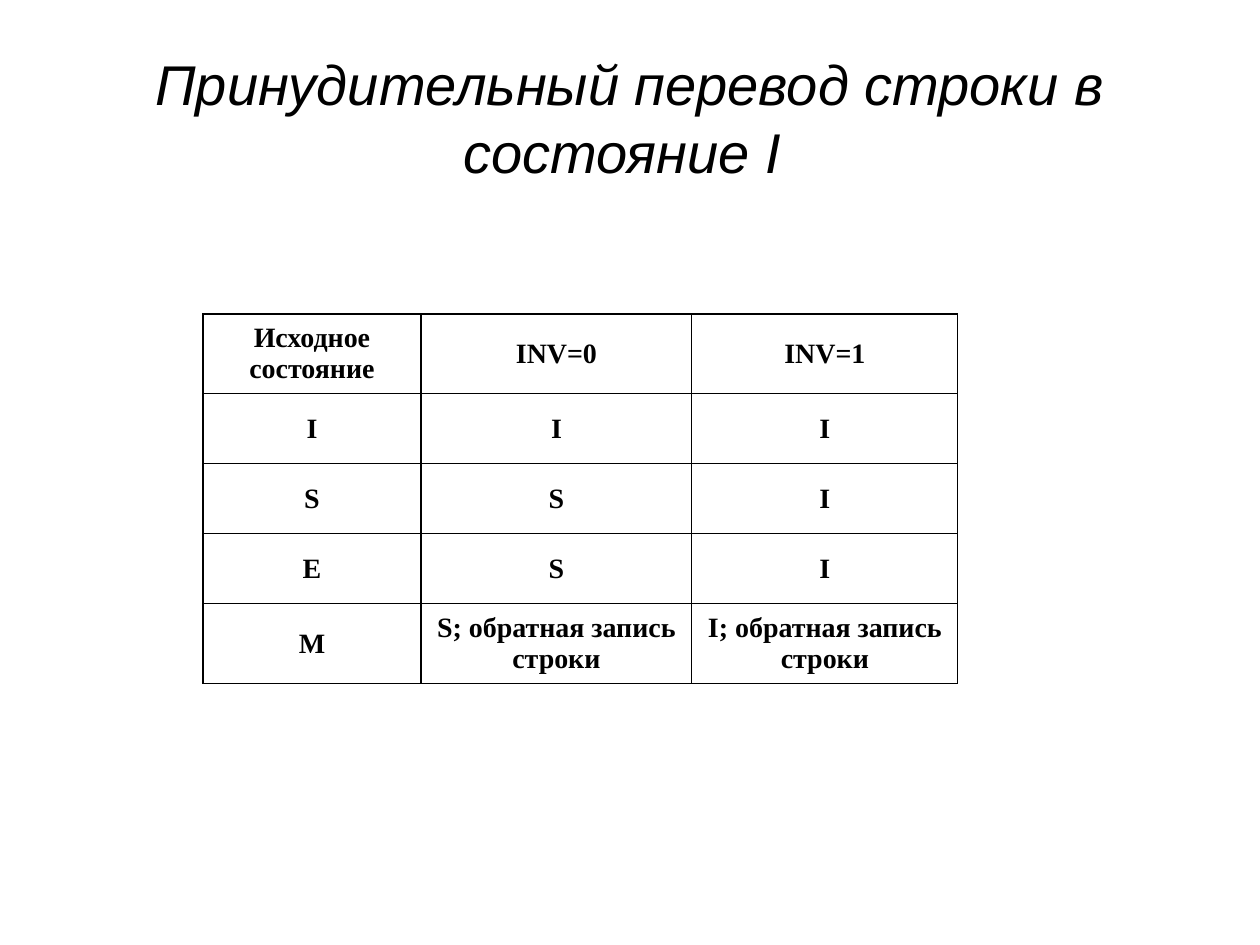
from lxml.etree import SubElement
from pptx import Presentation
from pptx.dml.color import RGBColor
from pptx.enum.text import MSO_ANCHOR, PP_ALIGN
from pptx.oxml.ns import qn
from pptx.util import Inches, Pt

PX = Inches(1) // 126
BLACK = RGBColor(0x00, 0x00, 0x00)
WHITE = RGBColor(0xFF, 0xFF, 0xFF)

TITLE = "Принудительный перевод строки в состояние I "
STATES = [
    ["Исходное состояние", "INV=0", "INV=1"],
    ["I", "I", "I"],
    ["S", "S", "I"],
    ["Е", "S", "I"],
    ["М", "S; обратная запись строки", "I; обратная запись строки"],
]
COL_WIDTHS = [218, 271, 266]
ROW_HEIGHTS = [79, 70, 70, 70, 79]


class SlideBuilder:
    title_font, title_size = "Arial", 32
    cell_font, cell_size = "Times New Roman", 16
    border_width = 0.75

    def __init__(self, prs):
        self.s = prs.slides.add_slide(prs.slide_layouts[6])
        fill = self.s.background.fill
        fill.solid()
        fill.fore_color.rgb = WHITE

    def add_text(self, tf, text, font, size, bold=False, italic=False):
        tf.word_wrap = True
        p = tf.paragraphs[0]
        p.alignment = PP_ALIGN.CENTER
        r = p.add_run()
        r.text = text
        r.font.name = font
        r.font.size = Pt(size)
        r.font.bold = bold
        r.font.italic = italic
        r.font.color.rgb = BLACK

    def title(self, text, x, y, w, h):
        sp = self.s.shapes.add_textbox(x * PX, y * PX, w * PX, h * PX)
        tf = sp.text_frame
        tf.vertical_anchor = MSO_ANCHOR.MIDDLE
        self.add_text(tf, text, self.title_font, self.title_size, italic=True)

    def border(self, cell):
        """Draw all four cell edges; they must precede the fill in tcPr."""
        tcPr = cell._tc.get_or_add_tcPr()
        for side in ("a:lnL", "a:lnR", "a:lnT", "a:lnB"):
            ln = SubElement(tcPr, qn(side), w=str(Pt(self.border_width)))
            solid = SubElement(ln, qn("a:solidFill"))
            SubElement(solid, qn("a:srgbClr"), val=str(BLACK))

    def table(self, rows, x, y, widths, heights):
        table = self.s.shapes.add_table(
            len(rows), len(widths), x * PX, y * PX,
            sum(widths) * PX, sum(heights) * PX).table
        table.first_row = table.horz_banding = False
        for col, width in zip(table.columns, widths):
            col.width = width * PX
        for row, height, texts in zip(table.rows, heights, rows):
            row.height = height * PX
            for cell, text in zip(row.cells, texts):
                cell.vertical_anchor = MSO_ANCHOR.MIDDLE
                self.border(cell)
                cell.fill.background()
                self.add_text(cell.text_frame, text, self.cell_font,
                              self.cell_size, bold=True)


def main():
    prs = Presentation()
    prs.slide_width, prs.slide_height = Inches(10), Inches(7.5)
    slide = SlideBuilder(prs)
    slide.title(TITLE, 63, 38, 1134, 158)
    slide.table(STATES, 203, 314, COL_WIDTHS, ROW_HEIGHTS)
    prs.save("out.pptx")


if __name__ == "__main__":
    main()
